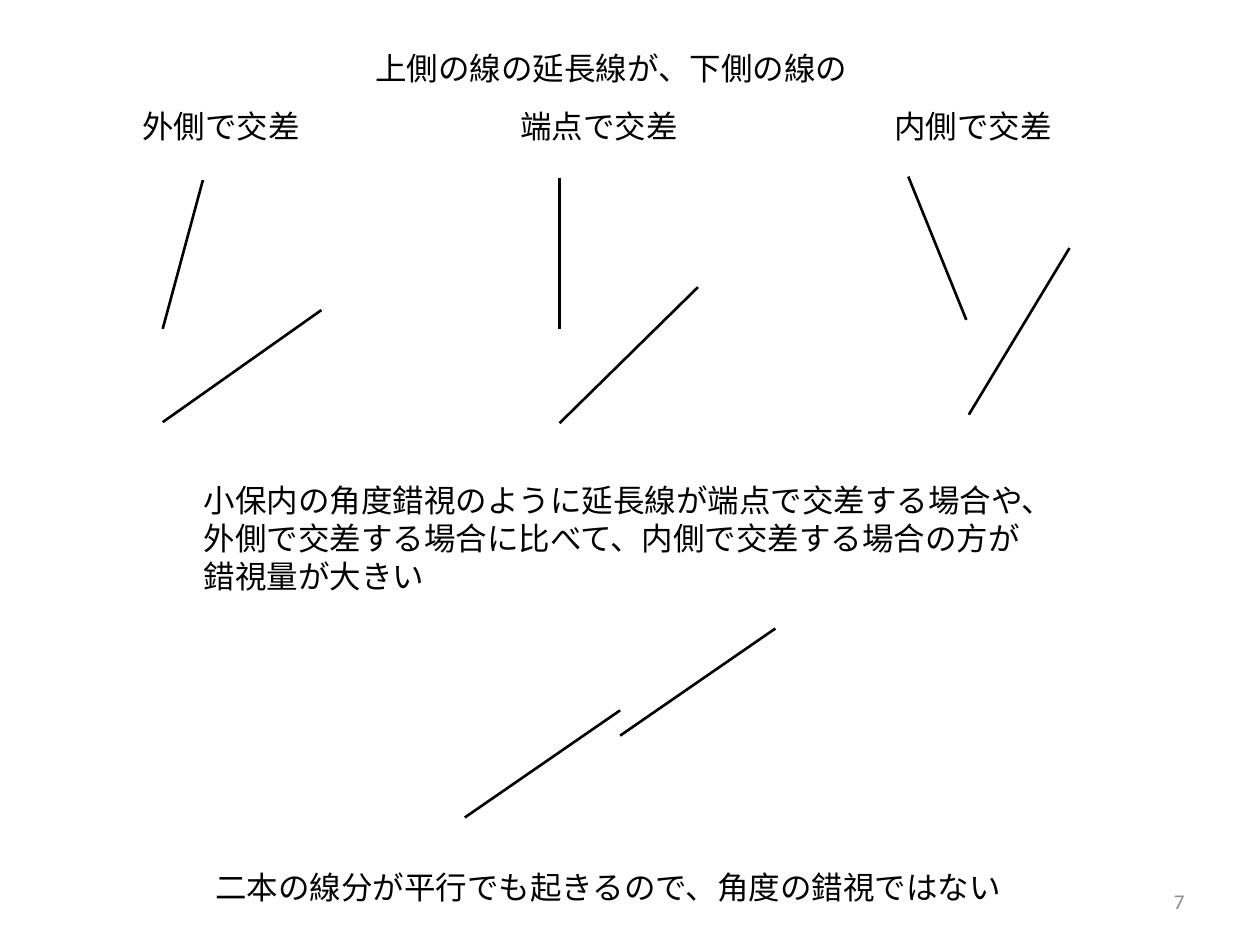
"""Build the slide on how the angle illusion depends on the crossing point."""
from lxml import etree
from pptx import Presentation
from pptx.dml.color import RGBColor
from pptx.enum.shapes import MSO_CONNECTOR
from pptx.enum.text import MSO_ANCHOR, MSO_AUTO_SIZE, PP_ALIGN
from pptx.oxml.ns import qn
from pptx.util import Cm, Pt

STRAIGHT = MSO_CONNECTOR.STRAIGHT
TOP, MIDDLE = MSO_ANCHOR.TOP, MSO_ANCHOR.MIDDLE
LEFT, RIGHT = PP_ALIGN.LEFT, PP_ALIGN.RIGHT
FIT_SHAPE, NO_FIT = MSO_AUTO_SIZE.SHAPE_TO_FIT_TEXT, MSO_AUTO_SIZE.NONE

BLACK = RGBColor(0x00, 0x00, 0x00)
GREY = RGBColor(0x8C, 0x8C, 0x8C)
JAPANESE_FONT = "Noto Sans CJK JP"
NUMBER_FONT = "Calibri"
LINE_HEIGHT = 1.02

CASES = [
    ("外側で交差", 2.62, [(1.47, 1.6, 0.66, 4.6), (3.86, 4.22, 0.66, 6.48)]),
    ("端点で交差", 10.24, [(1.04, 1.55, 1.04, 4.6), (3.83, 3.76, 1.04, 6.5)]),
    ("内側で交差", 17.78, [(0.53, 1.53, 1.7, 4.42), (3.78, 2.97, 1.75, 6.33)]),
]
EXPLANATION = [
    "小保内の角度錯視のように延長線が端点で交差する場合や、",
    "外側で交差する場合に比べて、内側で交差する場合の方が",
    "錯視量が大きい",
]


def add_text(slide, box, lines, *, size=18, font=JAPANESE_FONT, color=BLACK,
             align=LEFT, anchor=TOP, wrap=False, auto_size=FIT_SHAPE):
    """Place one paragraph per line in a text box."""
    shape = slide.shapes.add_textbox(*map(Cm, box))
    frame = shape.text_frame
    frame.word_wrap = wrap
    frame.auto_size = auto_size
    frame.vertical_anchor = anchor
    frame.text = "\n".join(lines)
    for paragraph in frame.paragraphs:
        paragraph.alignment = align
        run = paragraph.runs[0]
        run.font.size = Pt(size)
        run.font.name = font
        run.font.color.rgb = color
        east_asian = etree.Element(qn("a:ea"), typeface=font)
        run.font._element.find(qn("a:latin")).addnext(east_asian)


def add_segments(slide, left, top, segments):
    """Draw segments given relative to the upper left corner."""
    for start_x, start_y, end_x, end_y in segments:
        line = slide.shapes.add_connector(
            STRAIGHT, Cm(left + start_x), Cm(top + start_y),
            Cm(left + end_x), Cm(top + end_y))
        line.line.color.rgb = BLACK
        line.line.width = Pt(1.5)
        etree.SubElement(line._element.spPr, qn("a:effectLst"))


def add_case(slide, left, top, label, segments):
    """Place a labelled pair of segments."""
    add_text(slide, (left, top, 4.22, LINE_HEIGHT), [label], wrap=True)
    add_segments(slide, left, top, segments)


def add_parallel_pair(slide, left, top, width, height, drop):
    """Draw two equal parallel segments, the left one lowered by drop."""
    add_segments(slide, left, top, [
        (2 * width, 0, width, height),
        (width, drop, 0, drop + height),
    ])


def main():
    """Assemble and save the slide."""
    presentation = Presentation()
    presentation.slide_width, presentation.slide_height = Cm(25.4), Cm(19.05)
    slide = presentation.slides.add_slide(presentation.slide_layouts[6])
    add_text(slide, (7.32, 0.86, 10.13, LINE_HEIGHT),
             ["上側の線の延長線が、下側の線の"])
    for label, left, segments in CASES:
        add_case(slide, left, 2.03, label, segments)
    add_text(slide, (3.86, 9.58, 17.81, 2.57), EXPLANATION)
    add_parallel_pair(slide, 9.37, 12.67, 3.13, 2.16, 1.65)
    add_text(slide, (4.09, 17.37, 17.15, LINE_HEIGHT),
             ["二本の線分が平行でも起きるので、角度の錯視ではない"])
    add_text(slide, (18.21, 17.65, 5.92, LINE_HEIGHT), ["7"], size=12,
             font=NUMBER_FONT, color=GREY, align=RIGHT, anchor=MIDDLE,
             wrap=True, auto_size=NO_FIT)
    presentation.save("out.pptx")


if __name__ == "__main__":
    main()
